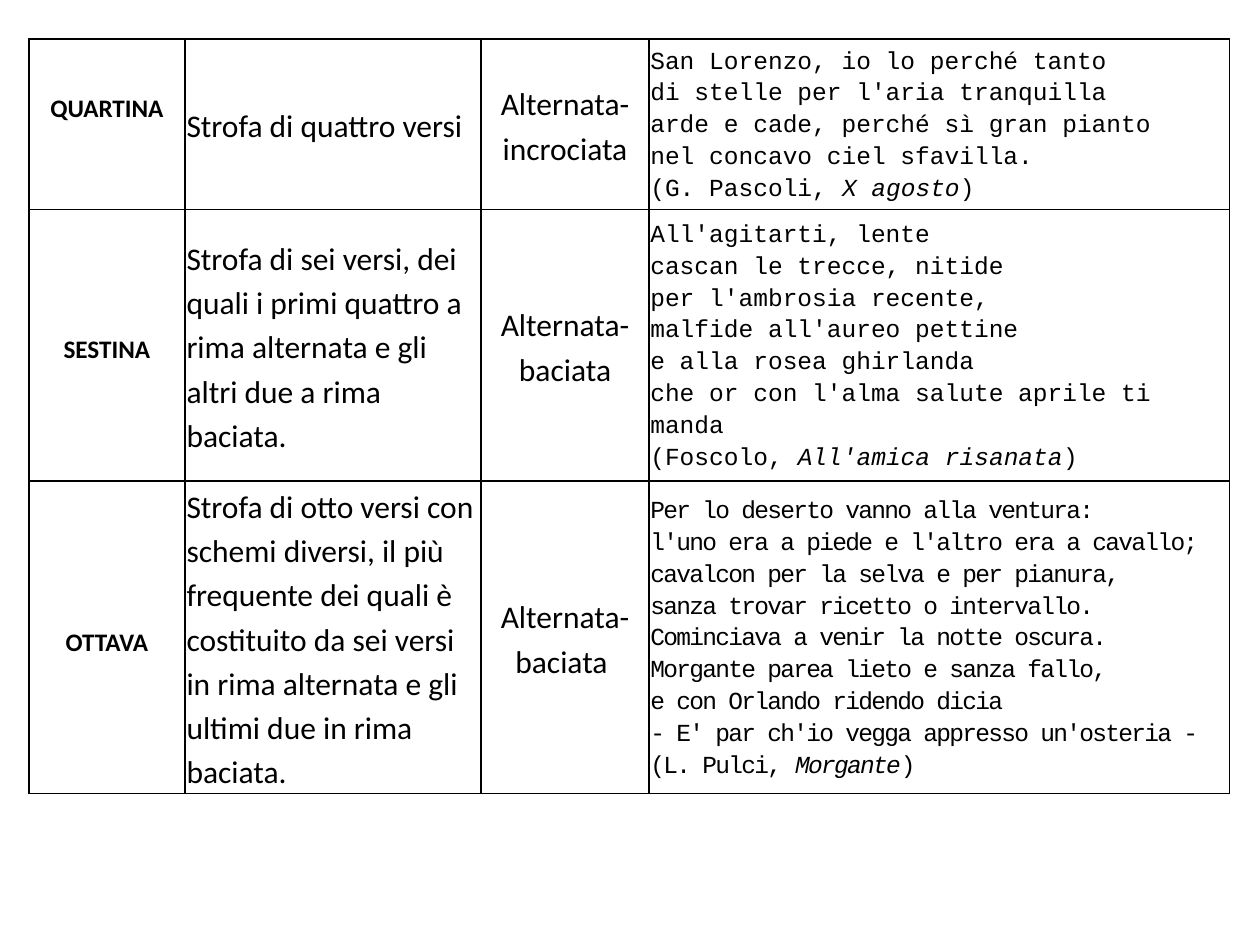
from dataclasses import dataclass

from lxml import etree
from pptx import Presentation
from pptx.dml.color import RGBColor
from pptx.enum.text import MSO_ANCHOR, PP_ALIGN
from pptx.oxml.ns import qn
from pptx.util import Cm, Pt

CENTER, LEFT = PP_ALIGN.CENTER, PP_ALIGN.LEFT
MIDDLE = MSO_ANCHOR.MIDDLE


@dataclass(frozen=True)
class Theme:
    ink: str = "000000"
    body_font: str = "Calibri"
    verse_font: str = "Courier New"
    body_size: int = 18
    verse_size: int = 14
    line_spacing: float = 1.15
    border_width: int = 1
    cell_margin: float = 0.03


THEME = Theme()

# Table geometry in centimetres
TABLE_LEFT, TABLE_TOP = 0.58, 0.79
COLUMN_WIDTHS = [3.15, 5.97, 3.38, 11.71]
ROW_HEIGHTS = [3.43, 5.48, 6.18]
QUARTINA_BOTTOM = 0.84


@dataclass(frozen=True)
class Stanza:
    name: str
    description: str
    rhyme: str
    verses: list
    author: str
    work: str
    tracking: int = 0
    name_bottom: float = THEME.cell_margin


STANZAS = [
    Stanza(
        "quartina",
        "Strofa di quattro versi",
        "Alternata-incrociata",
        [
            "San Lorenzo, io lo perché tanto",
            "di stelle per l'aria tranquilla",
            "arde e cade, perché sì gran pianto",
            "nel concavo ciel sfavilla.",
        ],
        "G. Pascoli",
        "X agosto",
        name_bottom=QUARTINA_BOTTOM,
    ),
    Stanza(
        "sestina",
        "Strofa di sei versi, dei quali i primi quattro a rima alternata "
        "e gli altri due a rima baciata.",
        "Alternata-baciata",
        [
            "All'agitarti, lente",
            "cascan le trecce, nitide",
            "per l'ambrosia recente,",
            "malfide all'aureo pettine",
            "e alla rosea ghirlanda",
            "che or con l'alma salute aprile ti manda",
        ],
        "Foscolo",
        "All'amica risanata",
    ),
    Stanza(
        "ottava",
        "Strofa di otto versi con schemi diversi, il più frequente dei quali "
        "è costituito da sei versi in rima alternata e gli ultimi due in rima baciata.",
        "Alternata-baciata ",
        [
            "Per lo deserto vanno alla ventura:",
            "l'uno era a piede e l'altro era a cavallo;",
            "cavalcon per la selva e per pianura,",
            "sanza trovar ricetto o intervallo.",
            "Cominciava a venir la notte oscura.",
            "Morgante parea lieto e sanza fallo,",
            "e con Orlando ridendo dicia",
            "- E' par ch'io vegga appresso un'osteria -",
        ],
        "L. Pulci",
        "Morgante",
        tracking=-1,
    ),
]


def add_run(paragraph, text, font_name, size, bold=False, italic=False):
    run = paragraph.add_run()
    run.text = text
    run.font.name = font_name
    run.font.size = Pt(size)
    run.font.bold = bold
    run.font.italic = italic
    run.font.color.rgb = RGBColor.from_string(THEME.ink)
    return run


def format_paragraph(paragraph, alignment):
    paragraph.alignment = alignment
    paragraph.line_spacing = THEME.line_spacing


def add_borders(cell):
    properties = cell._tc.get_or_add_tcPr()
    for side in ("lnL", "lnR", "lnT", "lnB"):
        line = etree.SubElement(properties, qn(f"a:{side}"), w=str(Pt(THEME.border_width)))
        fill = etree.SubElement(line, qn("a:solidFill"))
        etree.SubElement(fill, qn("a:srgbClr"), val=THEME.ink)


def format_cell(cell, bottom=THEME.cell_margin):
    cell.vertical_anchor = MIDDLE
    cell.margin_left = cell.margin_right = cell.margin_top = Cm(THEME.cell_margin)
    cell.margin_bottom = Cm(bottom)
    add_borders(cell)
    cell.fill.background()


def fill_name(cell, stanza):
    format_cell(cell, stanza.name_bottom)
    paragraph = cell.text_frame.paragraphs[0]
    format_paragraph(paragraph, CENTER)
    run = add_run(paragraph, stanza.name, THEME.body_font, THEME.body_size, bold=True)
    run._r.get_or_add_rPr().set("cap", "small")


def fill_body(cell, text, alignment):
    format_cell(cell)
    paragraph = cell.text_frame.paragraphs[0]
    format_paragraph(paragraph, alignment)
    add_run(paragraph, text, THEME.body_font, THEME.body_size)


def fill_example(cell, stanza):
    format_cell(cell)
    # Each line is a list of (text, italic) runs
    lines = [[(verse, False)] for verse in stanza.verses]
    lines.append([(f"({stanza.author}, ", False), (stanza.work, True), (")", False)])
    frame = cell.text_frame
    for index, line in enumerate(lines):
        paragraph = frame.add_paragraph() if index else frame.paragraphs[0]
        format_paragraph(paragraph, LEFT)
        for text, italic in line:
            run = add_run(paragraph, text, THEME.verse_font, THEME.verse_size, italic=italic)
            if stanza.tracking:
                run._r.get_or_add_rPr().set("spc", str(stanza.tracking * 100))


def add_stanza_table(slide):
    shape = slide.shapes.add_table(
        len(STANZAS), len(COLUMN_WIDTHS), Cm(TABLE_LEFT), Cm(TABLE_TOP),
        Cm(sum(COLUMN_WIDTHS)), Cm(sum(ROW_HEIGHTS)),
    )
    table = shape.table
    table.first_row = table.horz_banding = False
    for column, width in zip(table.columns, COLUMN_WIDTHS):
        column.width = Cm(width)
    for row, height, stanza in zip(table.rows, ROW_HEIGHTS, STANZAS):
        row.height = Cm(height)
        name, description, rhyme, example = row.cells
        fill_name(name, stanza)
        fill_body(description, stanza.description, LEFT)
        fill_body(rhyme, stanza.rhyme, CENTER)
        fill_example(example, stanza)


def main():
    presentation = Presentation()
    presentation.slide_width, presentation.slide_height = Cm(25.4), Cm(19.05)
    slide = presentation.slides.add_slide(presentation.slide_layouts[6])
    add_stanza_table(slide)
    presentation.save("out.pptx")


if __name__ == "__main__":
    main()
